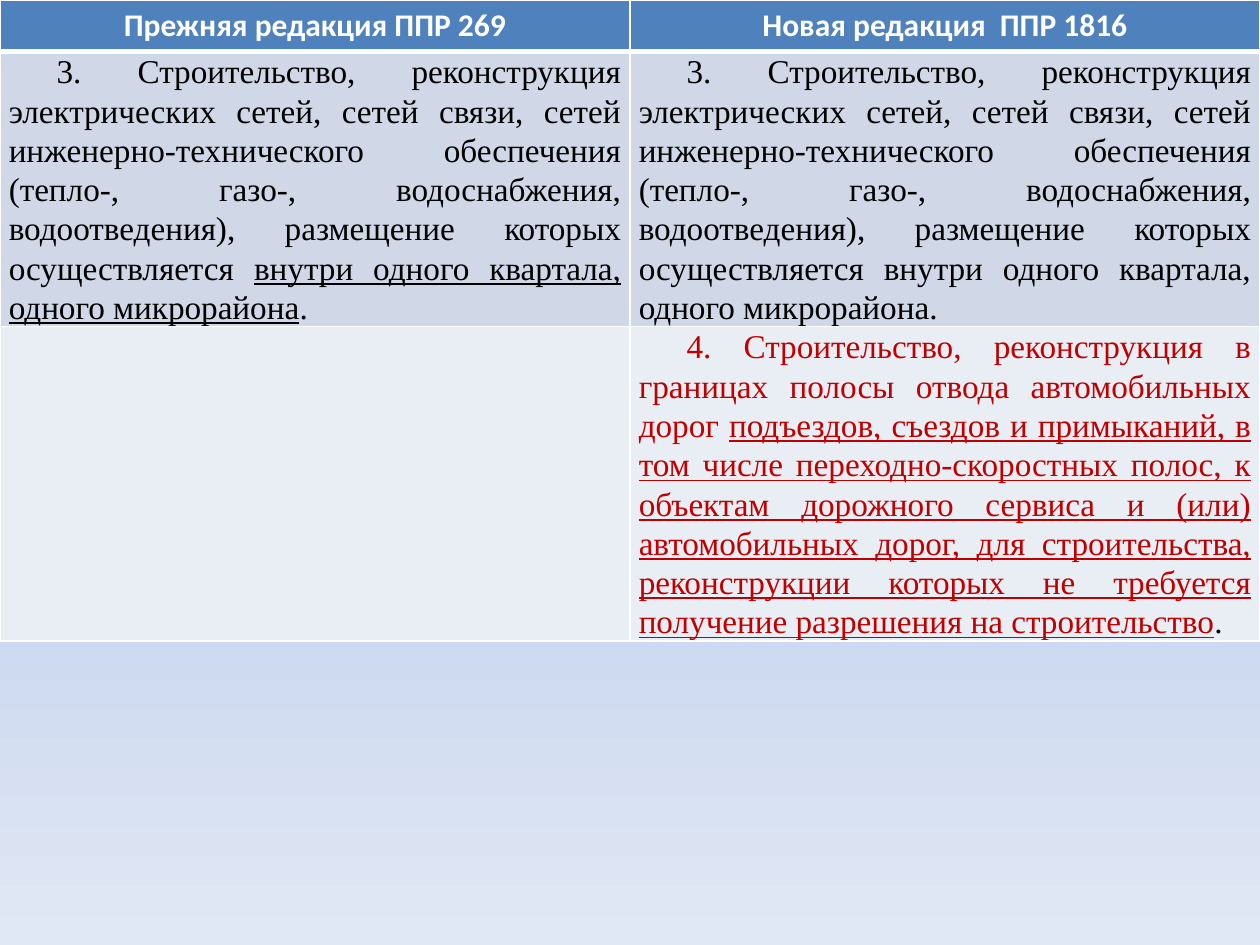
import copy
from dataclasses import dataclass

import lxml.etree
import pptx
import pptx.dml.color
import pptx.enum.text
import pptx.oxml.ns
import pptx.util

RGBColor = pptx.dml.color.RGBColor
WHITE = RGBColor(0xFF, 0xFF, 0xFF)
BLACK = RGBColor(0, 0, 0)
RED = RGBColor(0xC0, 0, 0)
HEADER_BLUE = RGBColor(0x4F, 0x81, 0xBD)
BAND_DARK = RGBColor(0xD0, 0xD8, 0xE8)
BAND_LIGHT = RGBColor(0xE9, 0xED, 0xF4)
BACKGROUND_STOPS = (
    (0, RGBColor(0x9A, 0xB5, 0xE4)),
    (0.5, RGBColor(0xC2, 0xD1, 0xED)),
    (1, RGBColor(0xE1, 0xE8, 0xF5)),
)

SLIDE_WIDTH = pptx.util.Inches(10)
SLIDE_HEIGHT = pptx.util.Inches(7.5)
ROW_HEIGHTS = (0.41, 2.18, 2.49)
ROW_FILLS = (HEADER_BLUE, BAND_DARK, BAND_LIGHT)
THIN, THICK = 1, 3
qn = pptx.oxml.ns.qn


@dataclass(frozen=True)
class Span:
    text: str
    color: RGBColor = BLACK
    underline: bool = False


@dataclass(frozen=True)
class TextStyle:
    font: str
    size: float
    bold: bool
    align: pptx.enum.text.PP_ALIGN


HEADER_STYLE = TextStyle("Calibri", 18, True, pptx.enum.text.PP_ALIGN.CENTER)
BODY_STYLE = TextStyle("Times New Roman", 19, False, pptx.enum.text.PP_ALIGN.JUSTIFY)

NETWORKS = (
    "3. Строительство, реконструкция электрических сетей, сетей связи, "
    "сетей инженерно-технического обеспечения (тепло-, газо-, водоснабжения, "
    "водоотведения), размещение которых осуществляется "
)
QUARTER = "внутри одного квартала, одного микрорайона"
ROADS = (
    "4. Строительство, реконструкция в границах полосы отвода автомобильных дорог "
)
ACCESS_ROADS = (
    "подъездов, съездов и примыканий, в том числе переходно-скоростных полос, "
    "к объектам дорожного сервиса и (или) автомобильных дорог, для строительства, "
    "реконструкции которых не требуется получение разрешения на строительство"
)
ROWS = (
    ((Span("Прежняя редакция ППР 269", WHITE),),
     (Span("Новая редакция  ППР 1816", WHITE),)),
    ((Span(NETWORKS), Span(QUARTER, underline=True), Span(".")),
     (Span(NETWORKS + QUARTER + "."),)),
    ((),
     (Span(ROADS, RED), Span(ACCESS_ROADS, RED, True), Span("."))),
)


def paint_background(slide) -> None:
    """Vertical gradient with three stops."""
    fill = slide.background.fill
    fill.gradient()
    fill.gradient_angle = 270
    stop_list = slide.element.find(".//" + qn("a:gsLst"))
    stop_list.append(copy.deepcopy(stop_list[-1]))
    for stop, (position, color) in zip(fill.gradient_stops, BACKGROUND_STOPS):
        stop.position = position
        stop.color.rgb = color


def add_border(cell, side: str, width: float) -> None:
    properties = cell._tc.get_or_add_tcPr()
    line = lxml.etree.SubElement(properties, qn(f"a:ln{side}"), w=str(pptx.util.Pt(width)))
    solid = lxml.etree.SubElement(line, qn("a:solidFill"))
    lxml.etree.SubElement(solid, qn("a:srgbClr"), val=str(WHITE))


def write_spans(cell, spans: tuple[Span, ...], style: TextStyle) -> None:
    para = cell.text_frame.paragraphs[0]
    para.alignment = style.align
    for span in spans:
        run = para.add_run()
        run.text = span.text
        run.font.name = style.font
        run.font.size = pptx.util.Pt(style.size)
        run.font.bold = style.bold
        run.font.underline = span.underline
        run.font.color.rgb = span.color


def format_body(cell) -> None:
    """Tight margins and an indented first line."""
    cell.margin_left = cell.margin_right = pptx.util.Inches(0.07)
    cell.margin_top = cell.margin_bottom = 0
    para = cell.text_frame.paragraphs[0]
    para.line_spacing = 1.07
    properties = para._p.get_or_add_pPr()
    properties.set("marL", "0")
    properties.set("indent", str(pptx.util.Inches(0.38)))


def add_comparison(slide) -> None:
    height = pptx.util.Inches(sum(ROW_HEIGHTS))
    table = slide.shapes.add_table(
        len(ROWS), len(ROWS[0]), 0, 0, SLIDE_WIDTH, height).table
    for row_index, row in enumerate(ROWS):
        table.rows[row_index].height = pptx.util.Inches(ROW_HEIGHTS[row_index])
        is_header = row_index == 0
        top = THICK if row_index == 1 else THIN
        bottom = THICK if is_header else THIN
        for column_index, spans in enumerate(row):
            cell = table.cell(row_index, column_index)
            for side, width in zip("LRTB", (THIN, THIN, top, bottom)):
                add_border(cell, side, width)
            cell.fill.solid()
            cell.fill.fore_color.rgb = ROW_FILLS[row_index]
            write_spans(cell, spans, HEADER_STYLE if is_header else BODY_STYLE)
            if not is_header:
                format_body(cell)


def main() -> None:
    deck = pptx.Presentation()
    deck.slide_width, deck.slide_height = SLIDE_WIDTH, SLIDE_HEIGHT
    page = deck.slides.add_slide(deck.slide_layouts[6])
    paint_background(page)
    add_comparison(page)
    deck.save("out.pptx")


if __name__ == "__main__":
    main()
